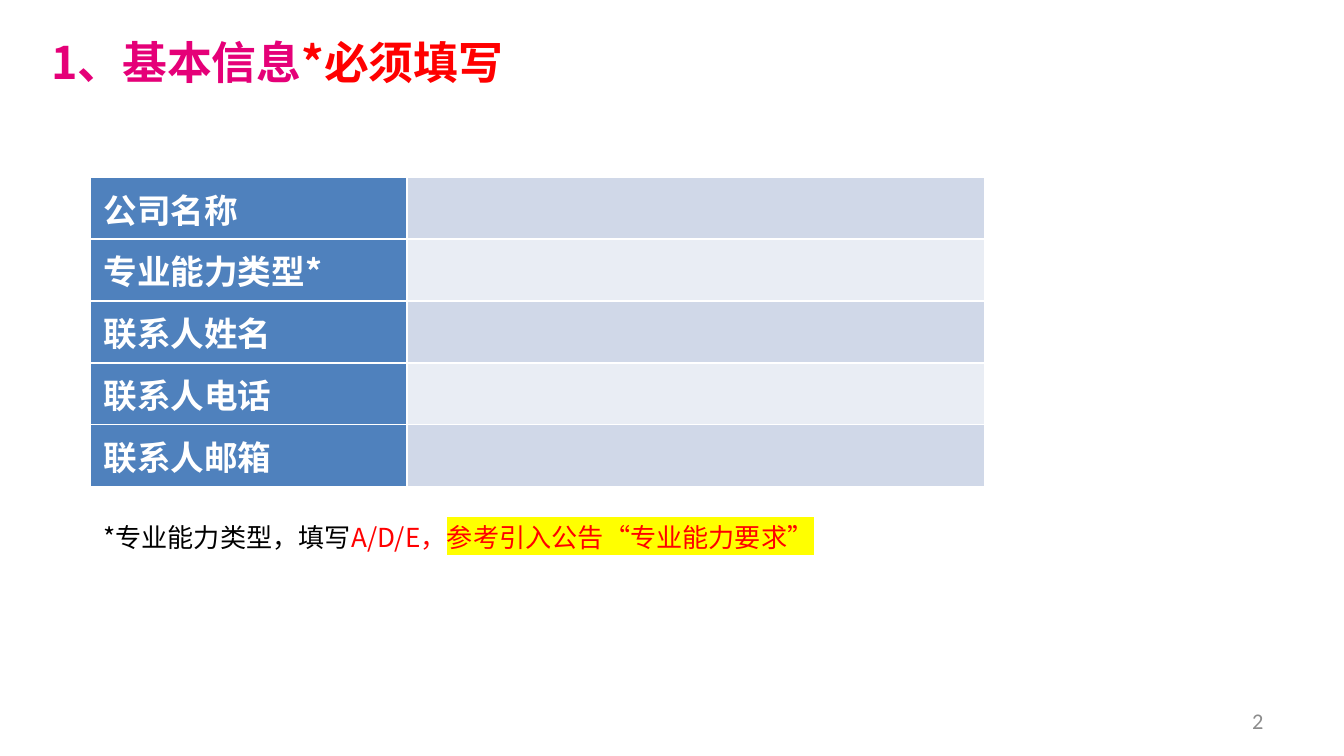
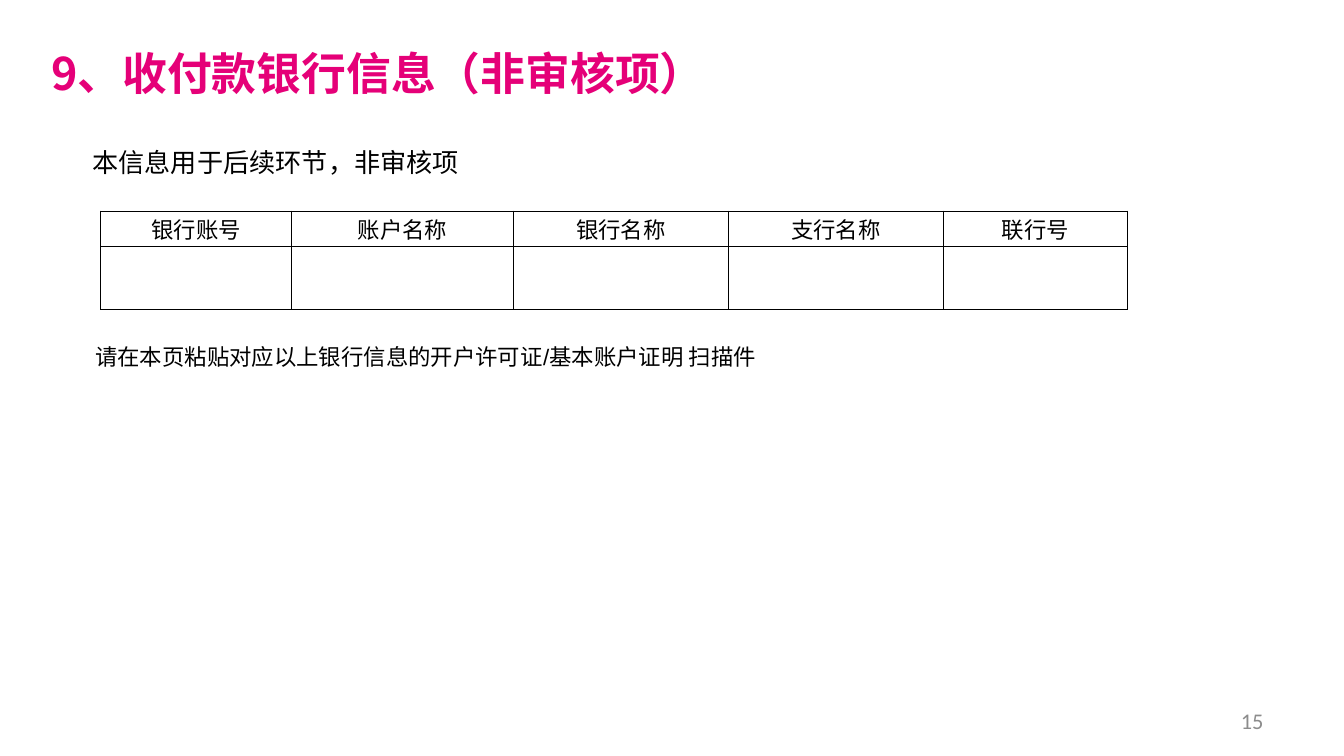
import pptx
import pptx.util
import pptx.dml.color
import pptx.enum.text
from dataclasses import dataclass
from lxml import etree
from pptx.oxml.ns import qn

Inches = pptx.util.Inches
Pt = pptx.util.Pt
ALIGN = pptx.enum.text.PP_ALIGN
ANCHOR = pptx.enum.text.MSO_ANCHOR


@dataclass(frozen=True)
class Theme:
    magenta: str = "E50078"
    red: str = "FF0000"
    black: str = "000000"
    white: str = "FFFFFF"
    grey: str = "8C8C8C"
    yellow: str = "FFFF00"
    label_fill: str = "4F81BD"
    bands: tuple = ("D0D8E8", "E9EDF4")
    font: str = "Noto Sans CJK SC"
    number_font: str = "Calibri"
    hint_font: str = "Arial"
    title_size: int = 24
    label_size: int = 18
    note_size: int = 14
    small_size: int = 12


THEME = Theme()

# Content: text as (words, colour, highlight) spans
BASIC_TITLE = [("1、基本信息", THEME.magenta), ("*必须填写", THEME.red)]
BASIC_LABELS = ["公司名称", "专业能力类型*", "联系人姓名", "联系人电话", "联系人邮箱"]
BASIC_NOTE = [
    ("*专业能力类型，填写", THEME.black),
    ("A/D/E，", THEME.red),
    ("参考引入公告“专业能力要求”", THEME.red, THEME.yellow),
]
BANK_TITLE = [("9、收付款银行信息（非审核项）", THEME.magenta)]
BANK_INTRO = [("本信息用于后续环节，非审核项", THEME.black)]
BANK_COLUMNS = [("银行账号", 1.42), ("账户名称", 1.65), ("银行名称", 1.6),
                ("支行名称", 1.6), ("联行号", 1.37)]
BANK_HINT = [("请在本页粘贴对应以上银行信息的开户许可证/基本账户证明 扫描件", THEME.black)]


def rgb(value):
    return pptx.dml.color.RGBColor.from_string(value)


# Text
def write(frame, spans, size, font=THEME.font, bold=False, align=ALIGN.LEFT):
    para = frame.paragraphs[0]
    para.alignment = align
    for words, colour, *highlight in spans:
        span = para.add_run()
        span.text = words
        span.font.size = Pt(size)
        span.font.bold = bold
        span.font.color.rgb = rgb(colour)
        properties = span.font._element
        for mark in highlight:
            holder = etree.SubElement(properties, qn("a:highlight"))
            etree.SubElement(holder, qn("a:srgbClr"), val=mark)
        span.font.name = font
        etree.SubElement(properties, qn("a:ea"), typeface=THEME.font)
    return para


def add_text(page, place, spans, size, anchor=ANCHOR.TOP, wrap=True, **style):
    frame = page.shapes.add_textbox(*map(Inches, place)).text_frame
    frame.word_wrap = wrap
    frame.vertical_anchor = anchor
    return write(frame, spans, size, **style)


# Page with title and number
def add_page(deck, title, place, number):
    page = deck.slides.add_slide(deck.slide_layouts[5])
    box = page.shapes.title
    box.left, box.top, box.width, box.height = map(Inches, place)
    frame = box.text_frame
    frame.word_wrap = True
    frame.auto_size = pptx.enum.text.MSO_AUTO_SIZE.NONE
    frame.vertical_anchor = ANCHOR.TOP
    write(frame, title, THEME.title_size, bold=True)
    add_text(page, (7.17, 5.21, 2.33, 0.3), [(number, THEME.grey)], THEME.small_size,
             anchor=ANCHOR.MIDDLE, font=THEME.number_font, align=ALIGN.RIGHT)
    return page


# Tables
def add_table(page, left, top, widths, heights, line_colour, line_width):
    table = page.shapes.add_table(
        len(heights), len(widths), Inches(left), Inches(top),
        Inches(sum(widths)), Inches(sum(heights))).table
    table.first_row = table.horz_banding = False
    for column, width in zip(table.columns, widths):
        column.width = Inches(width)
    for row, height in zip(table.rows, heights):
        row.height = Inches(height)
    for cell in table.iter_cells():
        properties = cell._tc.get_or_add_tcPr()
        for side in ("lnL", "lnR", "lnT", "lnB"):
            line = etree.SubElement(properties, qn(f"a:{side}"), w=str(Pt(line_width)))
            fill = etree.SubElement(line, qn("a:solidFill"))
            etree.SubElement(fill, qn("a:srgbClr"), val=line_colour)
        cell.fill.background()
    return table


def fill_cell(cell, colour):
    cell.fill.solid()
    cell.fill.fore_color.rgb = rgb(colour)


def build_basic_page(deck):
    page = add_page(deck, BASIC_TITLE, (0.28, 0.21, 3.94, 0.62), "2")
    table = add_table(page, 0.67, 1.32, [2.36, 4.3], [0.46] * len(BASIC_LABELS),
                      THEME.white, 1)
    for index, label in enumerate(BASIC_LABELS):
        cell = table.cell(index, 0)
        fill_cell(cell, THEME.label_fill)
        write(cell.text_frame, [(label, THEME.white)], THEME.label_size, bold=True)
        fill_cell(table.cell(index, 1), THEME.bands[index % 2])
    add_text(page, (0.67, 3.83, 8.74, 0.34), BASIC_NOTE, THEME.note_size)


def build_bank_page(deck):
    page = add_page(deck, BANK_TITLE, (0.28, 0.29, 8.19, 0.62), "15")
    intro = add_text(page, (0.59, 0.92, 3.07, 0.41), BANK_INTRO, THEME.note_size)
    intro.line_spacing = 1.5
    table = add_table(page, 0.75, 1.57, [width for _, width in BANK_COLUMNS],
                      [0.26, 0.47], THEME.black, 0.5)
    for index, (label, _) in enumerate(BANK_COLUMNS):
        cell = table.cell(0, index)
        cell.vertical_anchor = ANCHOR.MIDDLE
        cell.margin_left = cell.margin_right = Inches(0.01)
        cell.margin_top = cell.margin_bottom = Inches(0.01)
        write(cell.text_frame, [(label, THEME.black)], THEME.small_size, align=ALIGN.CENTER)
    add_text(page, (0.61, 2.5, 5.35, 0.3), BANK_HINT, THEME.small_size,
             anchor=ANCHOR.MIDDLE, wrap=False, font=THEME.hint_font)


def main():
    deck = pptx.Presentation()
    # Widescreen, 16 to 9
    deck.slide_width = Inches(10)
    deck.slide_height = deck.slide_width * 9 // 16
    build_basic_page(deck)
    build_bank_page(deck)
    deck.save("out.pptx")


if __name__ == "__main__":
    main()
